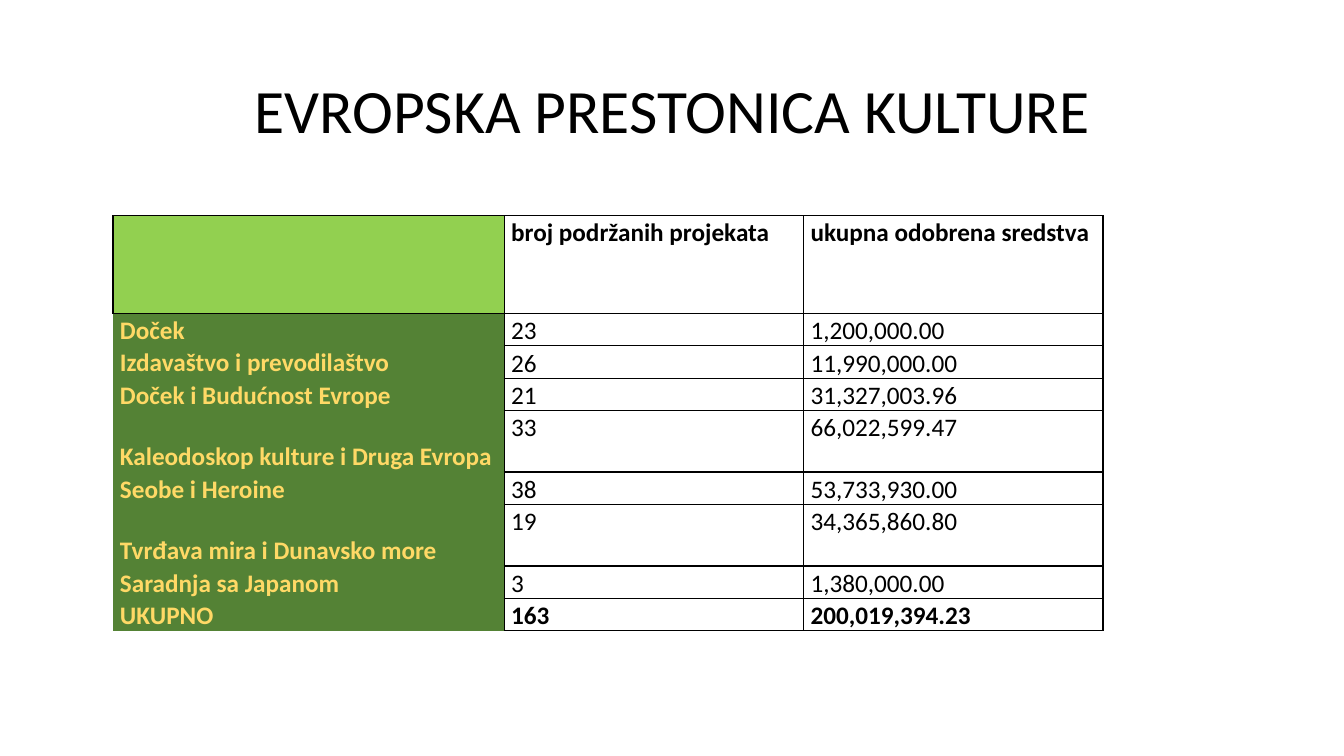
from lxml.etree import fromstring
from pptx import Presentation
from pptx.dml.color import RGBColor
from pptx.enum.text import MSO_ANCHOR as Anchor, PP_ALIGN as Align
from pptx.oxml.ns import nsdecls
from pptx.util import Inches, Pt

COLORS = {
    "text": "000000",
    "border": "000000",
    "corner": "92D050",
    "label_fill": "548235",
    "label_text": "FFD966",
}
HEADER = ("", "broj podržanih projekata", "ukupna odobrena sredstva")
PROJECTS = [
    ("Doček", "23", "1,200,000.00"),
    ("Izdavaštvo i prevodilaštvo", "26", "11,990,000.00"),
    ("Doček i Budućnost Evrope", "21", "31,327,003.96"),
    ("Kaleodoskop kulture i Druga Evropa", "33", "66,022,599.47"),
    ("Seobe i Heroine", "38", "53,733,930.00"),
    ("Tvrđava mira i Dunavsko more", "19", "34,365,860.80"),
    ("Saradnja sa Japanom", "3", "1,380,000.00"),
]
TOTAL = ("UKUPNO", "163", "200,019,394.23")
COLUMN_WIDTHS = (3.88, 2.97, 2.97)
ROW_HEIGHTS = (0.97, 0.31, 0.31, 0.31, 0.61, 0.31, 0.61, 0.32, 0.32)


def write_text(frame, text, size, color, spacing, bold=False):
    para = frame.paragraphs[0]
    para.text = text
    para.line_spacing = spacing
    para.font.name = "Calibri"
    para.font.size = Pt(size)
    para.font.bold = bold
    para.font.color.rgb = RGBColor.from_string(COLORS[color])
    return para


def set_borders(cell, drawn_sides):
    """Draw the given sides (letters out of LRTB) and blank the others."""
    properties = cell._tc.get_or_add_tcPr()
    solid = f'<a:solidFill><a:srgbClr val="{COLORS["border"]}"/></a:solidFill>'
    for position, side in enumerate("LRTB"):
        paint = solid if side in drawn_sides else "<a:noFill/>"
        line = f'<a:ln{side} {nsdecls("a")} w="{Pt(1)}">{paint}</a:ln{side}>'
        properties.insert(position, fromstring(line, properties.getroottree().parser))


deck = Presentation()
deck.slide_width, deck.slide_height = Inches(13.33), Inches(7.5)
page = deck.slides.add_slide(deck.slide_layouts[6])

title = page.shapes.add_textbox(Inches(0.92), Inches(0.4), Inches(11.5), Inches(1.45))
title.text_frame.word_wrap = True
title.text_frame.vertical_anchor = Anchor.MIDDLE
heading = write_text(title.text_frame, "EVROPSKA PRESTONICA KULTURE", 44, "text", 0.9)
heading.alignment = Align.CENTER

rows = [HEADER, *PROJECTS, TOTAL]
table = page.shapes.add_table(
    len(rows), len(HEADER), Inches(1.12), Inches(2.14),
    Inches(sum(COLUMN_WIDTHS)), Inches(sum(ROW_HEIGHTS)),
).table
table.first_row = table.horz_banding = False
for column, width in zip(table.columns, COLUMN_WIDTHS):
    column.width = Inches(width)
for row, height in zip(table.rows, ROW_HEIGHTS):
    row.height = Inches(height)

for row_index, values in enumerate(rows):
    for column_index, value in enumerate(values):
        cell = table.cell(row_index, column_index)
        is_header = row_index == 0
        is_label = column_index == 0 and not is_header
        cell.margin_left = cell.margin_right = Inches(0.07)
        cell.margin_top = cell.margin_bottom = 0
        cell.vertical_anchor = Anchor.BOTTOM if is_label else Anchor.TOP
        write_text(
            cell.text_frame, value, 18, "label_text" if is_label else "text", 1.07,
            bold=is_label or is_header or values is TOTAL,
        )
        if column_index == 0:
            fill = COLORS["label_fill" if is_label else "corner"]
            cell.fill.solid()
            cell.fill.fore_color.rgb = RGBColor.from_string(fill)
        else:
            cell.fill.background()
        if is_label:
            set_borders(cell, "RT" if row_index == 1 else "R")
        else:
            set_borders(cell, "LRTB")

deck.save("out.pptx")
